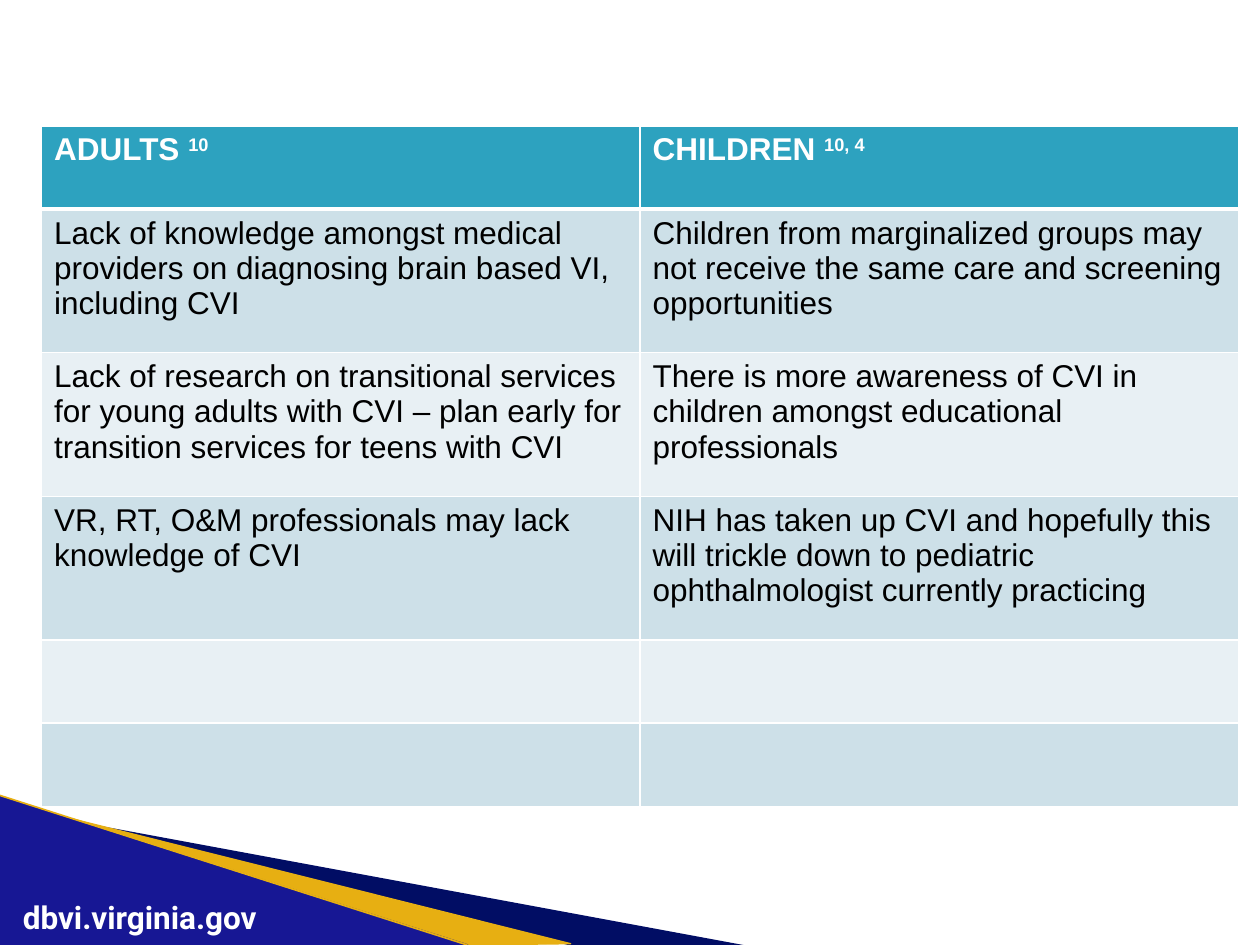
import pptx
import pptx.dml.color
import pptx.enum.shapes
import pptx.enum.text
import pptx.oxml
import pptx.oxml.ns
import pptx.util
from lxml import etree

Inches, Pt = pptx.util.Inches, pptx.util.Pt
COLORS = {name: pptx.dml.color.RGBColor.from_string(value) for name, value in {
    "white": "FFFFFF", "black": "000000", "navy": "010D64", "gold": "E7AF12",
    "blue": "171794", "header": "2DA2BF", "dark band": "CDE0E8",
    "light band": "E8F0F4"}.items()}


def paint(s, fill, line=None, width=0):
    s.shadow.inherit = False
    s.fill.solid()
    s.fill.fore_color.rgb = COLORS[fill]
    if line:
        s.line.color.rgb = COLORS[line]
        s.line.width = Pt(width)
    else:
        s.line.fill.background()


def set_borders(cell, bottom):
    """White cell borders, 1 pt except the bottom one."""
    tc_pr = cell._tc.get_or_add_tcPr()
    for i, (side, width) in enumerate(zip("LRTB", (1, 1, 1, bottom))):
        tc_pr.insert(i, pptx.oxml.parse_xml(
            f'<a:ln{side} {pptx.oxml.ns.nsdecls("a")} w="{Pt(width)}"><a:solidFill>'
            f'<a:srgbClr val="{COLORS["white"]}"/></a:solidFill></a:ln{side}>'))


prs = pptx.Presentation()
prs.slide_width, prs.slide_height = Inches(10), Inches(7.5)
shapes = prs.slides.add_slide(prs.slide_layouts[6]).shapes

# Corner decoration
stripes = [
    ([(0.5, 6.5), (5.9, 7.5), (4.51, 7.5), (0.5, 6.49)], ("navy",)),
    ([(0.5, 6.48), (4.53, 7.49), (3.68, 7.5), (0.5, 6.49)], ("gold", "gold", 0.75)),
]
for points, style in stripes:
    start, *rest = [(Inches(x), Inches(y)) for x, y in points]
    builder = shapes.build_freeform(*start)
    builder.add_line_segments(rest, close=True)
    paint(builder.convert_to_shape(), *style)

triangle = shapes.add_shape(pptx.enum.shapes.MSO_SHAPE.RIGHT_TRIANGLE,
                            Inches(-0.01), Inches(6.32), Inches(3.72), Inches(1.18))
paint(triangle, "blue", "blue", 1)

edge = shapes.add_connector(pptx.enum.shapes.MSO_CONNECTOR.STRAIGHT,
                            Inches(-0.01), Inches(6.31), Inches(3.71), Inches(7.5))
edge.line.color.rgb = COLORS["gold"]
edge.line.width = Pt(0.95)
etree.SubElement(edge._element.spPr, pptx.oxml.ns.qn("a:effectLst"))

site = shapes.add_textbox(Inches(-0.25), Inches(7.08), Inches(2.72), Inches(0.4))
tf = site.text_frame
tf.word_wrap = True
p = tf.paragraphs[0]
p.text = "dbvi.virginia.gov"
p.alignment = pptx.enum.text.PP_ALIGN.CENTER
p.font.name, p.font.size, p.font.bold = "Roboto", Pt(18), True
p.font.color.rgb = COLORS["white"]

# Comparison table: each cell is its text and an optional superscript
rows = [
    (0.66, ("ADULTS ", "10"), ("CHILDREN ", "10, 4")),
    (1.14, ("Lack of knowledge amongst medical providers on diagnosing brain based VI, "
            "including CVI",),
     ("Children from marginalized groups may not receive the same care and screening "
      "opportunities",)),
    (1.14, ("Lack of research on transitional services for young adults with CVI – plan "
            "early for transition services for teens with CVI",),
     ("There is more awareness of CVI in children amongst educational professionals",)),
    (1.14, ("VR, RT, O&M professionals may lack knowledge of CVI",),
     ("NIH has taken up CVI and hopefully this will trickle down to pediatric "
      "ophthalmologist currently practicing",)),
    (0.66, (), ()),
    (0.66, (), ()),
]
table = shapes.add_table(len(rows), 2, Inches(0.33), Inches(1), Inches(9.5),
                         Inches(sum(row[0] for row in rows))).table
for i, (height, *cells) in enumerate(rows):
    table.rows[i].height = Inches(height)
    is_header = i == 0
    fill = "header" if is_header else ("light band", "dark band")[i % 2]
    for j, texts in enumerate(cells):
        cell = table.cell(i, j)
        cell.fill.solid()
        cell.fill.fore_color.rgb = COLORS[fill]
        set_borders(cell, 3 if is_header else 1)
        p = cell.text_frame.paragraphs[0]
        p.font.name, p.font.size, p.font.bold = "Arial", Pt(18), is_header
        p.font.color.rgb = COLORS["white" if is_header else "black"]
        for k, text in enumerate(texts):
            r = p.add_run()
            r.text = text
            if k == 1:
                r._r.get_or_add_rPr().set("baseline", "30000")

prs.save("out.pptx")
